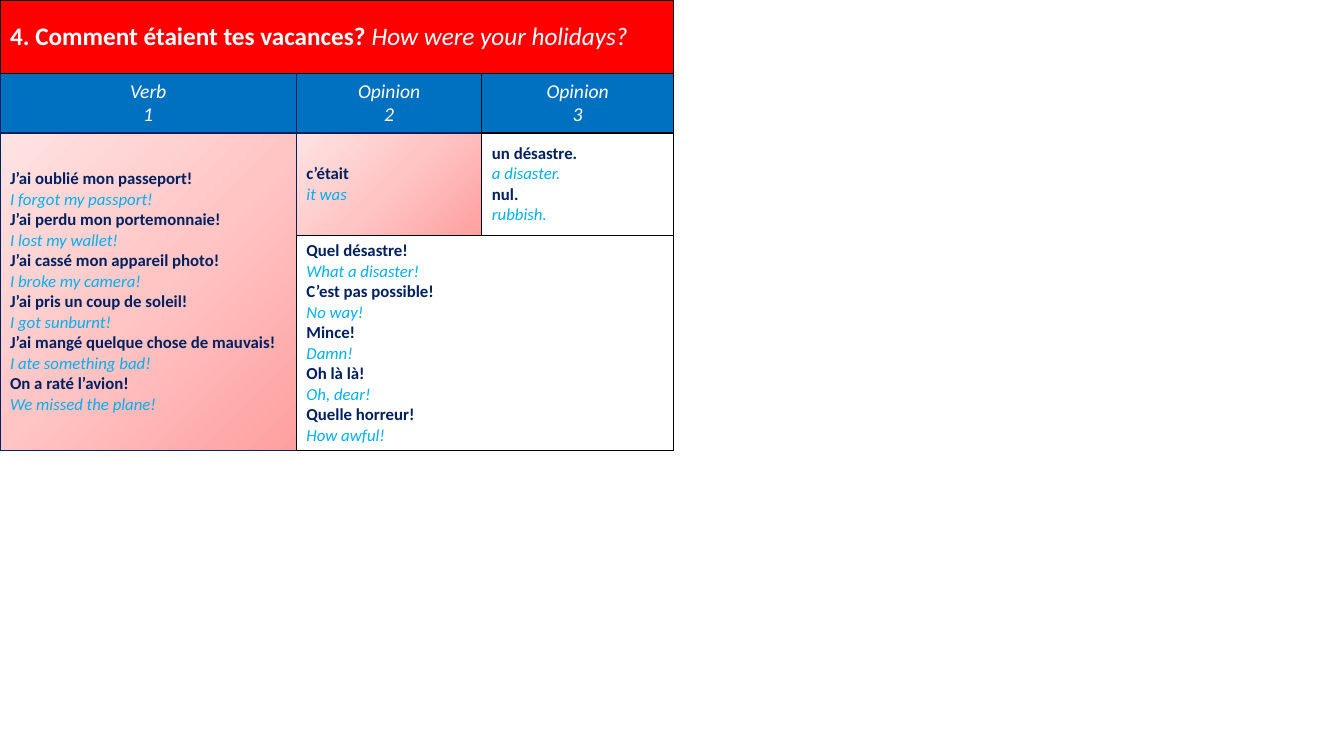
from dataclasses import dataclass

from lxml.etree import SubElement
from pptx import Presentation
from pptx.dml.color import RGBColor
from pptx.enum.text import MSO_ANCHOR, PP_ALIGN
from pptx.oxml.ns import qn
from pptx.util import Inches, Pt


@dataclass(frozen=True)
class Theme:
    font: str = "Calibri"
    title_size: int = 18
    header_size: int = 14
    body_size: int = 12
    white: str = "FFFFFF"
    black: str = "000000"
    red: str = "FF0000"
    blue: str = "0070C0"
    navy: str = "002060"
    sky: str = "00B0F0"
    pinks: tuple = ("FFA0A0", "FFC5C5", "FFE3E3")


THEME = Theme()
COLUMNS = (2.94, 1.84, 1.9)
ROWS = (0.73, 0.59, 1.02, 2.1)
HEADERS = (("Verb", "1"), ("Opinion", "2"), ("Opinion", "3"))
VERBS = (
    ("J’ai oublié mon passeport!", "I forgot my passport!"),
    ("J’ai perdu mon portemonnaie!", "I lost my wallet!"),
    ("J’ai cassé mon appareil photo!", "I broke my camera!"),
    ("J’ai pris un coup de soleil!", "I got sunburnt!"),
    ("J’ai mangé quelque chose de mauvais!", "I ate something bad!"),
    ("On a raté l’avion!", "We missed the plane!"),
)
IT_WAS = (("c’était", "it was"),)
OPINIONS = (("un désastre.", "a disaster."), ("nul.", "rubbish."))
EXCLAMATIONS = (
    ("Quel désastre!", "What a disaster!"),
    ("C’est pas possible!", "No way!"),
    ("Mince!", "Damn!"),
    ("Oh là là!", "Oh, dear!"),
    ("Quelle horreur!", "How awful!"),
)
NAVY_EDGES = {(1, 0): "LRB", (1, 1): "LB", (2, 0): "LRTB", (3, 0): "LRTB", (2, 1): "LT"}


def set_font(font, size, color, bold=False, italic=False):
    font.name = THEME.font
    font.size = Pt(size)
    font.bold = bold
    font.italic = italic
    font.color.rgb = RGBColor.from_string(color)


def set_borders(cell, navy_edges):
    tcPr = cell._tc.get_or_add_tcPr()
    for edge in "LRTB":
        ln = SubElement(tcPr, qn(f"a:ln{edge}"), w=str(Pt(1)))
        fill = SubElement(ln, qn("a:solidFill"))
        color = THEME.navy if edge in navy_edges else THEME.black
        SubElement(fill, qn("a:srgbClr"), val=color)


def fill_solid(cell, color):
    cell.fill.solid()
    cell.fill.fore_color.rgb = RGBColor.from_string(color)


def fill_pink_gradient(cell):
    grad = SubElement(cell._tc.get_or_add_tcPr(), qn("a:gradFill"), rotWithShape="1")
    stops = SubElement(grad, qn("a:gsLst"))
    for i, color in enumerate(THEME.pinks):
        stop = SubElement(stops, qn("a:gs"), pos=str(i * 50000))
        SubElement(stop, qn("a:srgbClr"), val=color)
    shade = SubElement(grad, qn("a:path"), path="circle")
    SubElement(shade, qn("a:fillToRect"), l="100000", t="100000")


def write_lines(cell, lines):
    tf = cell.text_frame
    tf.text = "\n".join(lines)
    return tf.paragraphs


def write_title(cell):
    p = cell.text_frame.paragraphs[0]
    french, english = p.add_run(), p.add_run()
    french.text = "4. Comment étaient tes vacances? "
    english.text = "How were your holidays?"
    set_font(french.font, THEME.title_size, THEME.white, bold=True)
    set_font(english.font, THEME.title_size, THEME.white, italic=True)


def write_header(cell, lines):
    for p in write_lines(cell, lines):
        p.alignment = PP_ALIGN.CENTER
        set_font(p.font, THEME.header_size, THEME.white, italic=True)


def write_phrases(cell, phrases):
    lines = [line for pair in phrases for line in pair]
    for i, p in enumerate(write_lines(cell, lines)):
        english = i % 2 == 1
        color = THEME.sky if english else THEME.navy
        set_font(p.font, THEME.body_size, color, bold=not english, italic=english)


def add_phrase_table(slide, left, top, width, height):
    frame = slide.shapes.add_table(len(ROWS), len(COLUMNS), left, top, width, height)
    table = frame.table
    table.first_row = table.horz_banding = False
    for column, share in zip(table.columns, COLUMNS):
        column.width = round(width * share / sum(COLUMNS))
    for row, share in zip(table.rows, ROWS):
        row.height = round(height * share / sum(ROWS))

    for r in range(len(ROWS)):
        for c in range(len(COLUMNS)):
            cell = table.cell(r, c)
            cell.vertical_anchor = MSO_ANCHOR.MIDDLE
            set_borders(cell, NAVY_EDGES.get((r, c), ""))
            if r >= 2 and (c == 0 or (r, c) == (2, 1)):
                fill_pink_gradient(cell)
            else:
                fill_solid(cell, (THEME.red, THEME.blue, THEME.white, THEME.white)[r])

    for start, end in (((0, 0), (0, 2)), ((2, 0), (3, 0)), ((3, 1), (3, 2))):
        table.cell(*start).merge(table.cell(*end))

    write_title(table.cell(0, 0))
    for c, lines in enumerate(HEADERS):
        write_header(table.cell(1, c), lines)
    write_phrases(table.cell(2, 0), VERBS)
    write_phrases(table.cell(2, 1), IT_WAS)
    write_phrases(table.cell(2, 2), OPINIONS)
    write_phrases(table.cell(3, 1), EXCLAMATIONS)


def main():
    prs = Presentation()
    prs.slide_width, prs.slide_height = Inches(13.33), Inches(7.5)
    s = prs.slides.add_slide(prs.slide_layouts[6])
    add_phrase_table(s, Inches(0), Inches(0), Inches(sum(COLUMNS)), Inches(sum(ROWS)))
    prs.save("out.pptx")


if __name__ == "__main__":
    main()
